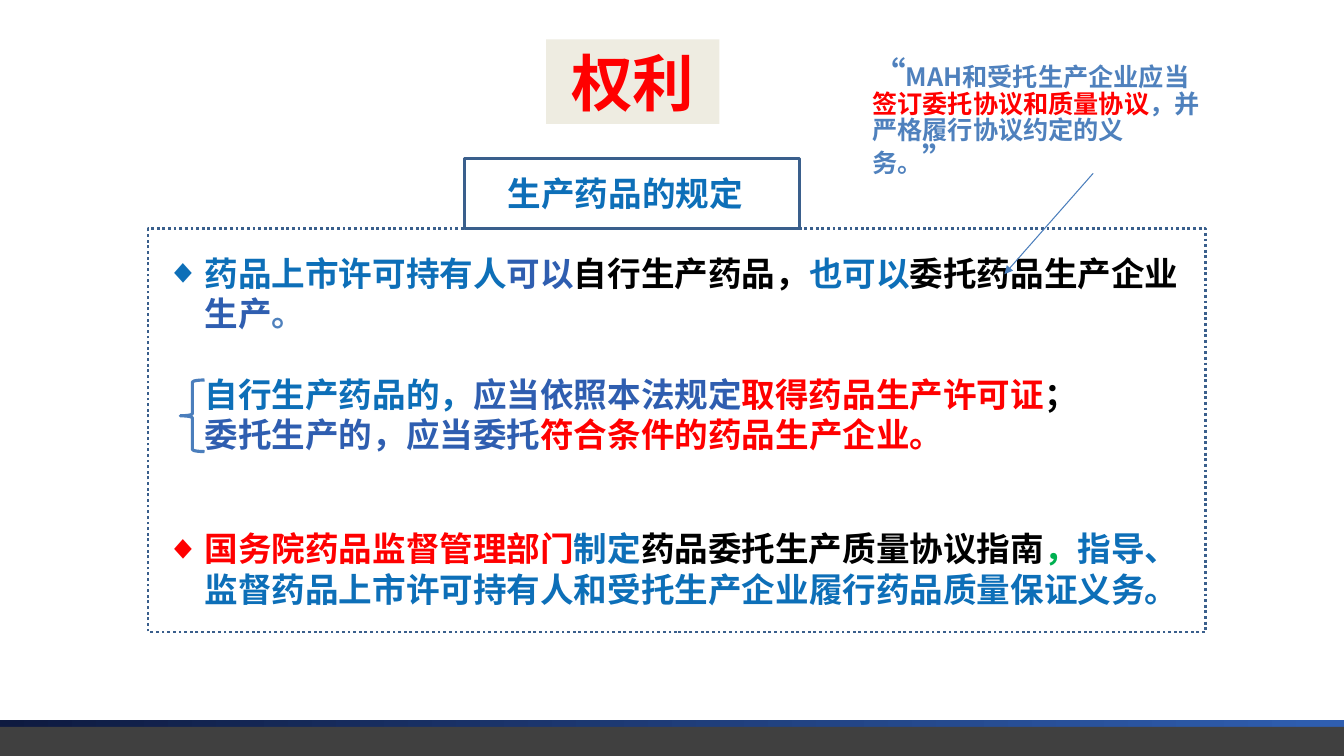
from dataclasses import dataclass

import pptx
import pptx.util
import pptx.dml.color
import pptx.enum.dml
import pptx.enum.shapes
import pptx.enum.text
import pptx.oxml.ns
from lxml import etree
from pptx.util import Inches, Pt

SHAPE = pptx.enum.shapes.MSO_SHAPE
ANCHOR = pptx.enum.text.MSO_ANCHOR
FONT = "Noto Sans CJK SC"
BLUE, NAVY, SKY = "0D6FB8", "2F5EB0", "4F81BD"
RED, BLACK, GREEN = "FF0000", "000000", "00B050"
EDGE, LINE = "3A5F8C", "4B7EBC"


@dataclass
class Run:
    text: str
    color: str
    size: float | None = None


@dataclass
class Item:
    runs: list[Run]
    bullet: bool = False
    gap: float = 0


@dataclass
class Box:
    left: float
    top: float
    width: float
    height: float

    def spans(self) -> list[int]:
        return [Inches(v) for v in (self.left, self.top, self.width, self.height)]


RULES = [
    Item([Run("药品上市许可持有人", BLUE), Run("可以", NAVY),
          Run("自行生产药品，", BLACK), Run("也可以", BLUE),
          Run("委托药品生产企业", BLACK), Run("生产", NAVY), Run("。", SKY)],
         bullet=True),
    Item([Run("自行生产药品的，", BLUE), Run("应当依照本法规定", NAVY),
          Run("取得药品生产许可证", RED), Run("；", BLACK)], gap=28.8),
    Item([Run("委托生产的，应当委托", NAVY),
          Run("符合条件的药品生产企业。", RED)]),
    Item([Run("国务院药品监督管理部门", RED), Run("制定", BLUE),
          Run("药品委托生产质量协议指南", BLACK), Run("，", GREEN),
          Run("指导、监督药品上市许可持有人和受托生产企业履行药品质量保证义务。", BLUE)],
         bullet=True, gap=52.7),
]
QUOTE = [Run("“", SKY, 24), Run("MAH和受托生产企业应当", SKY),
         Run("签订委托协议和质量协议", RED),
         Run("，并严格履行协议约定的义务。", SKY), Run("”", SKY, 24)]


def rgb(code: str) -> pptx.dml.color.RGBColor:
    return pptx.dml.color.RGBColor.from_string(code)


def place(shape, box: Box) -> None:
    shape.left, shape.top, shape.width, shape.height = box.spans()


def style(para, size: float, name: str = FONT) -> None:
    para.font.name = name
    para.font.size = Pt(size)
    para.font.bold = True


def write(para, runs: list[Run]) -> None:
    for part in runs:
        run = para.add_run()
        run.text = part.text
        run.font.color.rgb = rgb(part.color)
        if part.size:
            run.font.size = Pt(part.size)


def mark(para, bullet: bool) -> None:
    """Set the hanging indent and the diamond, or no bullet."""
    props = para._p.get_or_add_pPr()
    props.set("marL", str(Inches(0.38)))
    props.set("indent", str(Inches(-0.38 if bullet else 0)))
    tag = "a:buChar" if bullet else "a:buNone"
    node = etree.SubElement(props, pptx.oxml.ns.qn(tag))
    if bullet:
        node.set("char", "◆")


def draw(slide, kind, box: Box, fill: str = "", line: str = "", width: float = 2):
    shape = slide.shapes.add_shape(kind, *box.spans())
    shape.shadow.inherit = False
    if fill:
        shape.fill.solid()
        shape.fill.fore_color.rgb = rgb(fill)
    else:
        shape.fill.background()
    if line:
        shape.line.color.rgb = rgb(line)
        shape.line.width = Pt(width)
    else:
        shape.line.fill.background()
    return shape


def footer(slide) -> None:
    band = draw(slide, SHAPE.RECTANGLE, Box(0, 7.14, 13.34, 0.36))
    band.fill.gradient()
    band.fill.gradient_angle = 0
    for stop, color, spot in zip(band.fill.gradient_stops, ("0E1A40", NAVY), (0, 1)):
        stop.color.rgb = rgb(color)
        stop.position = spot
    draw(slide, SHAPE.RECTANGLE, Box(0, 7.21, 13.34, 0.29), "404040")


def title(slide) -> None:
    shape = slide.shapes.title
    place(shape, Box(5.42, 0.39, 1.72, 0.84))
    shape.fill.solid()
    shape.fill.fore_color.rgb = rgb("EEECE1")
    shape.text_frame.vertical_anchor = ANCHOR.MIDDLE
    para = shape.text_frame.paragraphs[0]
    style(para, 44, "Calibri")
    write(para, [Run("权利", RED)])


def frames(slide) -> None:
    tab = draw(slide, SHAPE.RECTANGLE, Box(4.61, 1.57, 3.33, 0.7), line=EDGE)
    frame = tab.text_frame
    frame.margin_left = Inches(0.43)
    frame.vertical_anchor = ANCHOR.MIDDLE
    para = frame.paragraphs[0]
    para.alignment = pptx.enum.text.PP_ALIGN.LEFT
    style(para, 24)
    write(para, [Run("生产药品的规定", BLUE)])
    panel = draw(slide, SHAPE.RECTANGLE, Box(1.47, 2.27, 10.5, 4), line=EDGE)
    panel.line.dash_style = pptx.enum.dml.MSO_LINE.ROUND_DOT
    draw(slide, SHAPE.LEFT_BRACE, Box(1.79, 3.77, 0.24, 0.71), line=LINE, width=2.25)


def rules(slide) -> None:
    body = slide.placeholders[1]
    place(body, Box(1.55, 2.46, 10.42, 3.67))
    frame = body.text_frame
    frame.auto_size = pptx.enum.text.MSO_AUTO_SIZE.NONE
    for spot, item in enumerate(RULES):
        para = frame.add_paragraph() if spot else frame.paragraphs[0]
        mark(para, item.bullet)
        para.line_spacing = Pt(28.8)
        para.space_before = Pt(item.gap)
        style(para, 24)
        write(para, item.runs)


def quote(slide) -> None:
    """Add the quoted clause and the arrow to the rule it explains."""
    note = slide.shapes.add_textbox(*Box(8.56, 0.53, 3.5, 1.51).spans())
    note.text_frame.word_wrap = True
    para = note.text_frame.paragraphs[0]
    para.line_spacing = 0.86
    style(para, 18)
    write(para, QUOTE)
    ends = [Inches(v) for v in (10.85, 1.72, 9.97, 2.72)]
    arrow = slide.shapes.add_connector(
        pptx.enum.shapes.MSO_CONNECTOR.STRAIGHT, *ends)
    arrow.line.color.rgb = rgb(LINE)
    arrow.line.width = Pt(0.75)
    tip = etree.SubElement(arrow.line._get_or_add_ln(), pptx.oxml.ns.qn("a:tailEnd"))
    tip.set("type", "triangle")
    etree.SubElement(arrow._element.spPr, pptx.oxml.ns.qn("a:effectLst"))


def main() -> None:
    deck = pptx.Presentation()
    deck.slide_width, deck.slide_height = Inches(13.34), Inches(7.5)
    slide = deck.slides.add_slide(deck.slide_layouts[1])
    for part in (footer, title, frames, rules, quote):
        part(slide)
    deck.save("out.pptx")


if __name__ == "__main__":
    main()
